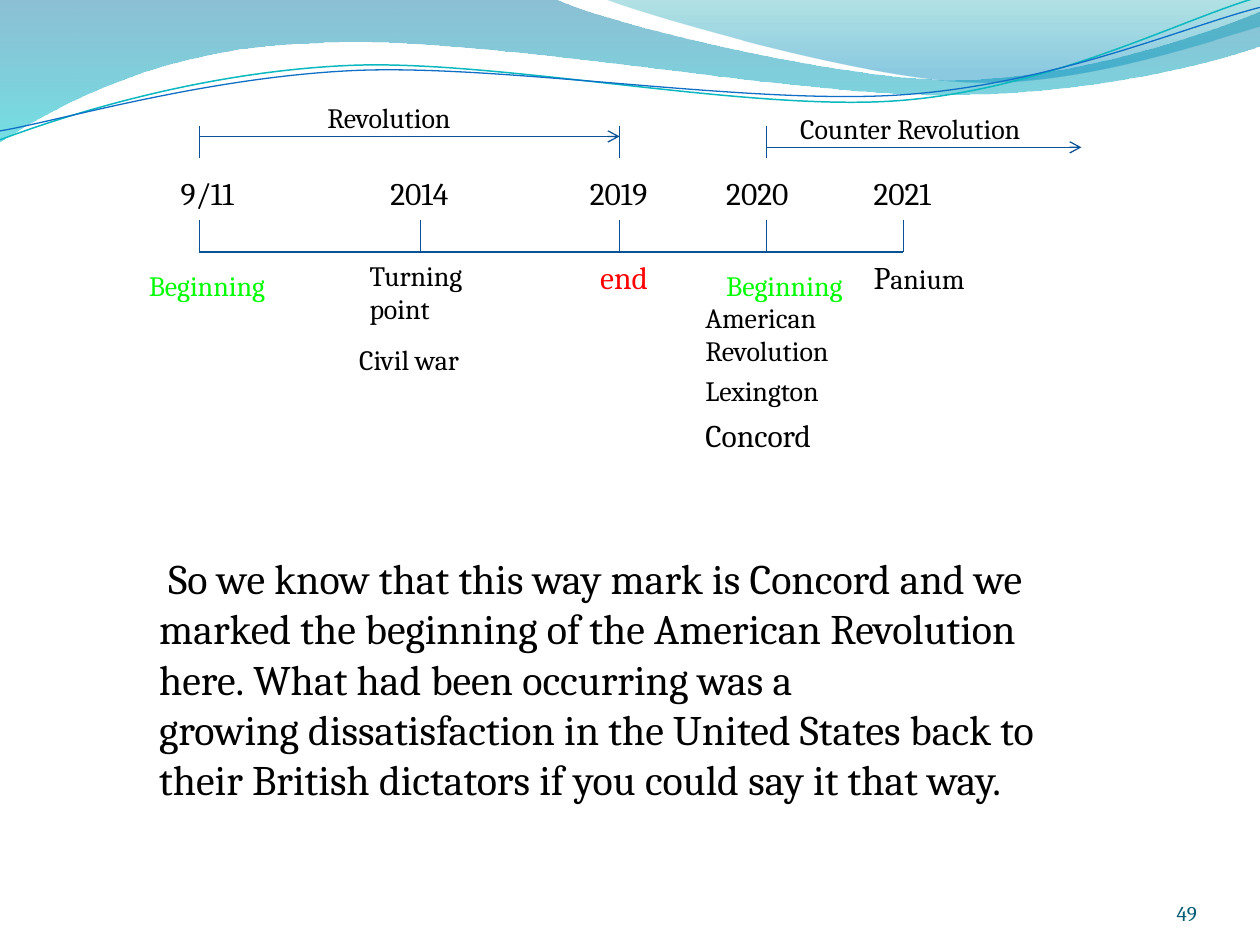
"""Build a timeline slide of the revolution and the counter revolution."""
from dataclasses import dataclass

from lxml.etree import SubElement
from pptx import Presentation
from pptx.dml.color import RGBColor
from pptx.enum.shapes import MSO_CONNECTOR
from pptx.enum.text import MSO_ANCHOR, MSO_AUTO_SIZE, PP_ALIGN
from pptx.oxml.ns import qn
from pptx.util import Cm, Pt

FONT = "Cambria"
BLACK, GREEN, RED = "000000", "00FF00", "FF0000"
TIMELINE_BLUE, NUMBER_BLUE = "095295", "045D75"
UNITS_PER_CM = 100
AXIS_TOP, YEAR_TOP, TICK = 5.08, 3.39, 0.64
SPAN_TICK_TOP = 2.54
NBSP = chr(160)
BODY_TEXT = (
    f"{NBSP}So{NBSP}we know that this way mark is Concord{NBSP}and we marked "
    f"the beginning of the{NBSP}American Revolution here.{NBSP}What had been "
    f"occurring was a growing{NBSP}dissatisfaction in the United "
    f"States{NBSP}back to their British dictators if you{NBSP}could say it that way."
)


@dataclass
class Stop:
    position: float
    color: str
    opacity: int


@dataclass
class Wave:
    start: tuple[float, float]
    segments: list[tuple[float, ...]]
    stops: tuple[Stop, ...] = ()
    line_color: str = ""
    line_width: float = 0


@dataclass
class Milestone:
    left: float
    year: str
    label_left: float
    label_width: float


@dataclass
class Label:
    text: str
    left: float
    top: float
    width: float
    height: float = 0.94
    size: int = 16
    color: str = BLACK


WAVES = [
    Wave((0, 0), [
        (11.18, -0.03),
        (12.09, 0.43, 16.87, 1.6, 19.25, 1.6),
        (21.67, 1.6, 24.33, 0.66, 25.4, 0.23),
        (25.43, 0.91),
        (24.97, 1.12, 22.1, 1.93, 18.95, 1.91),
        (15.8, 1.91, 9.7, 0.71, 6.53, 0.86),
        (3.28, 0.91, 1.17, 2.11, -0.03, 2.87),
        (0, 0),
    ], stops=(Stop(0, "0074A1", 45), Stop(1, "00C6CF", 55))),
    Wave((12.17, -0.03), [
        (12.93, 0.28, 17.32, 1.57, 19.53, 1.65),
        (21.74, 1.75, 24.41, 0.81, 25.4, 0.53),
        (25.4, 0),
        (12.17, -0.03),
    ], stops=(Stop(0, "00A1A9", 30), Stop(0.8, "008BBF", 45))),
    Wave((0, 2.82), [
        (1.22, 2.36, 4.01, 1.45, 7.04, 1.32),
        (10.03, 1.19, 15.06, 2.26, 18.11, 2.03),
        (21.16, 1.8, 23.83, 0.38, 25.35, -0.05),
    ], line_color="0AB8BF", line_width=0.85),
    Wave((0, 2.64), [
        (1.19, 2.44, 4.17, 1.55, 7.19, 1.42),
        (10.24, 1.3, 15.16, 2.13, 18.21, 1.91),
        (21.23, 1.7, 23.9, 0.53, 25.4, 0.15),
    ], line_color="0F6FC6", line_width=0.75),
]
MILESTONES = [
    Milestone(4.02, "9/11", 3.39, 1.91),
    Milestone(8.47, "2014", 7.62, 2.33),
    Milestone(12.49, "2019", 11.64, 2.33),
    Milestone(15.45, "2020", 14.39, 2.96),
    Milestone(18.21, "2021", 17.36, 2.33),
]
LABELS = [
    Label("Revolution", 6.35, 1.9, 4.02),
    Label("Counter Revolution", 15.88, 2.12, 5.93),
    Label("Beginning", 2.75, 5.29, 3.6, color=GREEN),
    Label("Turning point", 7.2, AXIS_TOP, 3.18, 1.63),
    Label("Civil war", 6.99, 6.78, 3.39),
    Label("end", 11.85, AXIS_TOP, 2.12, 1.02, 18, RED),
    Label("Beginning", 14.39, 5.29, 4.23, color=GREEN),
    Label("American Revolution", 13.97, 5.93, 3.81, 1.63),
    Label("Lexington", 13.97, 7.41, 3.39),
    Label("Concord", 13.97, 8.26, 3.18, 1.07, 18),
    Label(BODY_TEXT, 2.96, 11.01, 19.47, 5.39, 24),
]


def rgb(color: str) -> RGBColor:
    """Turn a hex string into a colour."""
    return RGBColor.from_string(color)


def bend_segments(shape, segments: list[tuple[float, ...]]) -> None:
    """Merge the three points of each curved segment into one cubic curve."""
    lines = iter(list(shape._element.spPr.iter(qn("a:lnTo"))))
    for segment in segments:
        first, *others = [next(lines) for _ in range(len(segment) // 2)]
        if others:
            first.tag = qn("a:cubicBezTo")
        for other in others:
            first.append(other[0])
            other.getparent().remove(other)


def add_wave(page, wave: Wave) -> None:
    """Draw a wave as a gradient area or as an open line."""
    values = [round(value * UNITS_PER_CM) for segment in wave.segments for value in segment]
    start_left, start_top = (round(value * UNITS_PER_CM) for value in wave.start)
    builder = page.shapes.build_freeform(start_left, start_top, scale=Cm(1) / UNITS_PER_CM)
    builder.add_line_segments(list(zip(values[::2], values[1::2])), close=bool(wave.stops))
    shape = builder.convert_to_shape()
    bend_segments(shape, wave.segments)
    shape.shadow.inherit = False
    if not wave.stops:
        shape.fill.background()
        shape.line.color.rgb = rgb(wave.line_color)
        shape.line.width = Pt(wave.line_width)
        return
    shape.line.fill.background()
    shape.fill.gradient()
    shape.fill.gradient_angle = 270
    for gradient_stop, stop in zip(shape.fill.gradient_stops, wave.stops):
        gradient_stop.position = stop.position
        gradient_stop.color.rgb = rgb(stop.color)
    colors = shape._element.spPr.iter(qn("a:srgbClr"))
    for element, stop in zip(colors, wave.stops):
        SubElement(element, qn("a:alpha"), val=str(stop.opacity * 1000))


def add_line(page, left: float, top: float, right: float, bottom: float, arrow: bool = False) -> None:
    """Draw a timeline line, with an arrowhead at its end if asked."""
    line = page.shapes.add_connector(
        MSO_CONNECTOR.STRAIGHT, Cm(left), Cm(top), Cm(right), Cm(bottom))
    line.line.color.rgb = rgb(TIMELINE_BLUE)
    line.line.width = Pt(0.75)
    if arrow:
        SubElement(line.line._get_or_add_ln(), qn("a:tailEnd"), type="arrow")
    SubElement(line._element.spPr, qn("a:effectLst"))


def format_span(span, size: int, color: str) -> None:
    """Set the font, size and colour of a run."""
    span.font.name = FONT
    span.font.size = Pt(size)
    span.font.color.rgb = rgb(color)


def add_label(page, label: Label):
    """Write a label and return its text box."""
    box = page.shapes.add_textbox(
        Cm(label.left), Cm(label.top), Cm(label.width), Cm(label.height))
    frame = box.text_frame
    frame.word_wrap = True
    frame.auto_size = MSO_AUTO_SIZE.SHAPE_TO_FIT_TEXT
    frame.text = label.text
    format_span(frame.paragraphs[0].runs[0], label.size, label.color)
    return box


def add_page_number(page, number: str) -> None:
    """Write the page number at the lower right."""
    frame = add_label(page, Label(number, 22.02, 17.65, 2.11, 1.02, 12, NUMBER_BLUE)).text_frame
    frame.auto_size = MSO_AUTO_SIZE.NONE
    frame.vertical_anchor = MSO_ANCHOR.BOTTOM
    frame.margin_left = frame.margin_right = frame.margin_top = frame.margin_bottom = 0
    frame.paragraphs[0].alignment = PP_ALIGN.RIGHT


def add_timeline(page) -> None:
    """Draw the axis, the milestones and the two spans above them."""
    add_line(page, MILESTONES[0].left, AXIS_TOP, MILESTONES[-1].left, AXIS_TOP)
    for mark in MILESTONES:
        add_line(page, mark.left, AXIS_TOP, mark.left, AXIS_TOP - TICK)
        add_label(page, Label(mark.year, mark.label_left, YEAR_TOP, mark.label_width, 1.07, 18))
    beginning, _, end, restart, _ = (mark.left for mark in MILESTONES)
    for left in (beginning, end, restart):
        add_line(page, left, SPAN_TICK_TOP + TICK, left, SPAN_TICK_TOP)
    add_line(page, beginning, 2.75, end, 2.75, arrow=True)
    add_line(page, restart, 2.97, 21.8, 2.97, arrow=True)


def main() -> None:
    """Build and save the deck."""
    deck = Presentation()
    deck.slide_width, deck.slide_height = Cm(25.4), Cm(19.05)
    page = deck.slides.add_slide(deck.slide_layouts[6])
    for wave in WAVES:
        add_wave(page, wave)
    add_page_number(page, "49")
    add_timeline(page)
    for label in LABELS:
        add_label(page, label)
    panium = add_label(page, Label("P", 17.36, AXIS_TOP, 2.96, 1.07, 18))
    span = panium.text_frame.paragraphs[0].add_run()
    span.text = "anium"
    format_span(span, 16, BLACK)
    deck.save("out.pptx")


if __name__ == "__main__":
    main()
